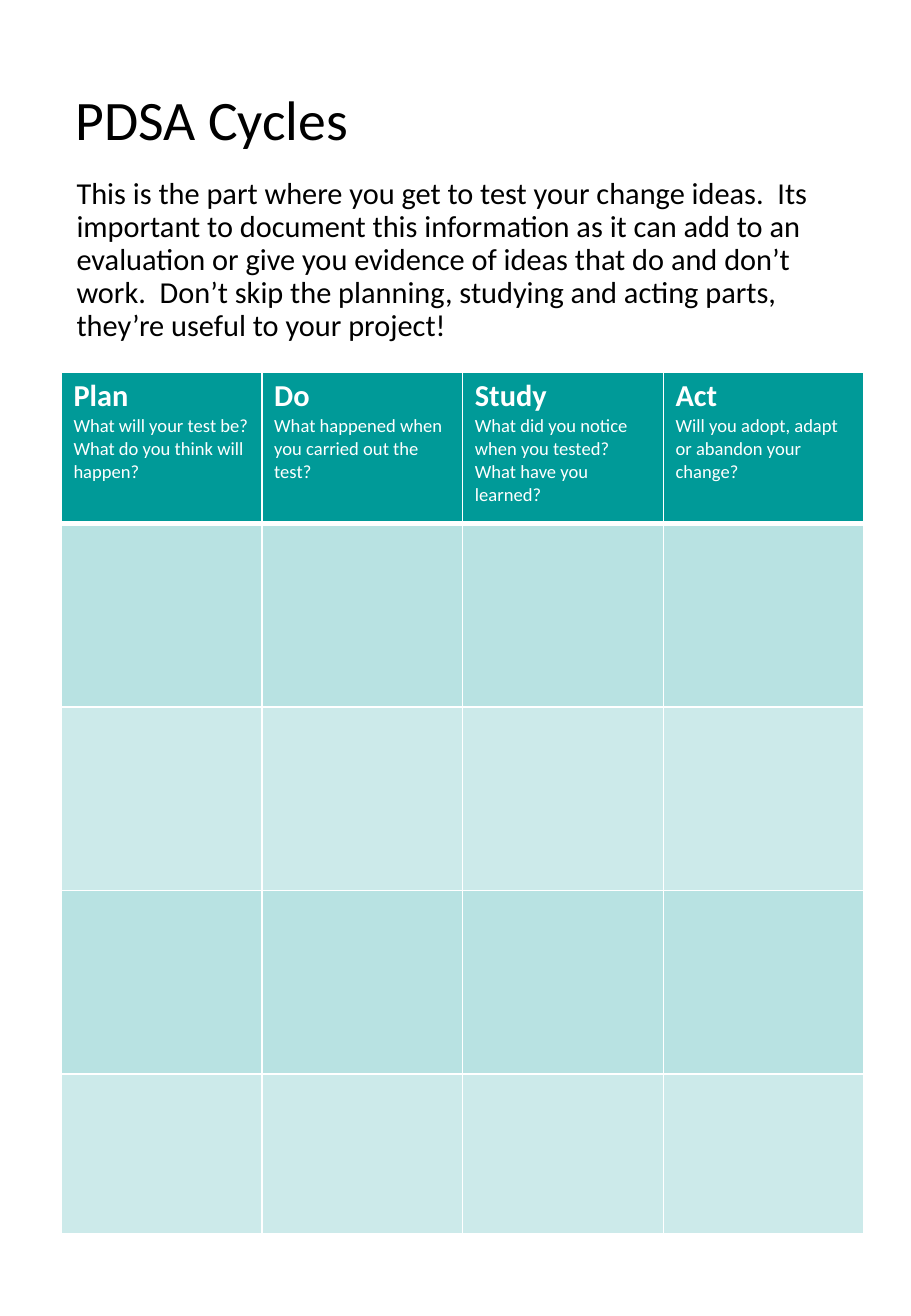
from dataclasses import dataclass

from lxml import etree
from pptx import Presentation, util as u
from pptx.dml.color import RGBColor
from pptx.enum import text
from pptx.oxml.ns import qn

# Grid: square steps of a tenth of an inch, 75 columns wide
STEP = u.Inches(0.1)
WIDE, HIGH = 75, 108.3
FONT = "Calibri"
HEX = {"ink": "000000", "paper": "FFFFFF", "teal": "009A98"}
INTRO = (
    "This is the part where you get to test your change ideas.  Its important "
    "to document this information as it can add to an evaluation or give you "
    "evidence of ideas that do and don’t work.  Don’t skip the planning, "
    "studying and acting parts, they’re useful to your project!"
)


@dataclass(frozen=True)
class Box:
    col: float
    row: float
    wide: float
    high: float

    def span(self) -> list[int]:
        return [grid(n) for n in (self.col, self.row, self.wide, self.high)]


@dataclass(frozen=True)
class Stage:
    name: str
    ask: str


STAGES = [
    Stage("Plan", "What will your test be? What do you think will happen?"),
    Stage("Do", "What happened when you carried out the test?"),
    Stage("Study", "What did you notice when you tested? What have you learned?"),
    Stage("Act", "Will you adopt, adapt or abandon your change?"),
]
ROWS = [12.5, 15.1, 15.1, 15.1, 13.1]
TINTS = [28, 20]
TABLE = Box(5.05, 30.6, 66.1, sum(ROWS))


def grid(n: float) -> int:
    return round(n * STEP)


def style(para, size: float, ink: str, bold: bool = False) -> None:
    font = para.font
    font.name, font.size, font.bold = FONT, u.Pt(size), bold
    font.color.rgb = RGBColor.from_string(HEX[ink])


def place(shape, box: Box, words: str, size: float, anchor) -> None:
    """Move a placeholder and set its one plain, unbulleted paragraph."""
    shape.left, shape.top, shape.width, shape.height = box.span()
    frame = shape.text_frame
    frame.word_wrap, frame.auto_size = True, text.MSO_AUTO_SIZE.NONE
    frame.vertical_anchor = anchor
    para = frame.paragraphs[0]
    para.text = words
    para.alignment = text.PP_ALIGN.LEFT
    para.line_spacing, para.space_before = 0.9, u.Pt(0)
    props = para._p.get_or_add_pPr()
    props.set("marL", "0")
    props.set("indent", "0")
    etree.SubElement(props, qn("a:buNone"))
    style(para, size, "ink")


def edge(cell, base: float) -> None:
    """Draw white borders, the lower one with its own width."""
    props = cell._tc.get_or_add_tcPr()
    for side, width in zip("LRTB", (1, 1, 1, base)):
        line = etree.SubElement(props, qn(f"a:ln{side}"), w=str(u.Pt(width)))
        fill = etree.SubElement(line, qn("a:solidFill"))
        etree.SubElement(fill, qn("a:srgbClr"), val=HEX["paper"])


def paint(cell, tint: int = 100) -> None:
    """Fill with teal at the given percentage of opacity."""
    cell.fill.solid()
    cell.fill.fore_color.rgb = RGBColor.from_string(HEX["teal"])
    if tint < 100:
        tone = cell._tc.tcPr.find(f"{qn('a:solidFill')}/{qn('a:srgbClr')}")
        etree.SubElement(tone, qn("a:alpha"), val=str(tint * 1000))


def head(cell, stage: Stage) -> None:
    frame = cell.text_frame
    name, ask = frame.paragraphs[0], frame.add_paragraph()
    name.text, ask.text = stage.name, stage.ask
    style(name, 18, "paper", bold=True)
    style(ask, 11, "paper")


def chart(slide) -> None:
    """Build the table of four stages with blank rows to fill in."""
    table = slide.shapes.add_table(len(ROWS), len(STAGES), *TABLE.span()).table
    table.horz_banding = False
    for col in table.columns:
        col.width = grid(TABLE.wide / len(STAGES))
    for i, high in enumerate(ROWS):
        table.rows[i].height = grid(high)
        for j, stage in enumerate(STAGES):
            cell = table.cell(i, j)
            edge(cell, 1 if i else 3)
            if i:
                paint(cell, TINTS[(i - 1) % len(TINTS)])
            else:
                paint(cell)
                head(cell, stage)


def main() -> None:
    deck = Presentation()
    deck.slide_width, deck.slide_height = grid(WIDE), grid(HIGH)
    slide = deck.slides.add_slide(deck.slide_layouts[1])

    # Title and introduction
    title, body = slide.placeholders
    place(title, Box(5.2, 5.8, 64.7, 8.5), "PDSA Cycles", 33, text.MSO_ANCHOR.MIDDLE)
    place(body, Box(5.3, 14.2, 64.7, 15.6), INTRO, 18, text.MSO_ANCHOR.TOP)

    # Cycle table
    chart(slide)
    deck.save("out.pptx")


if __name__ == "__main__":
    main()
